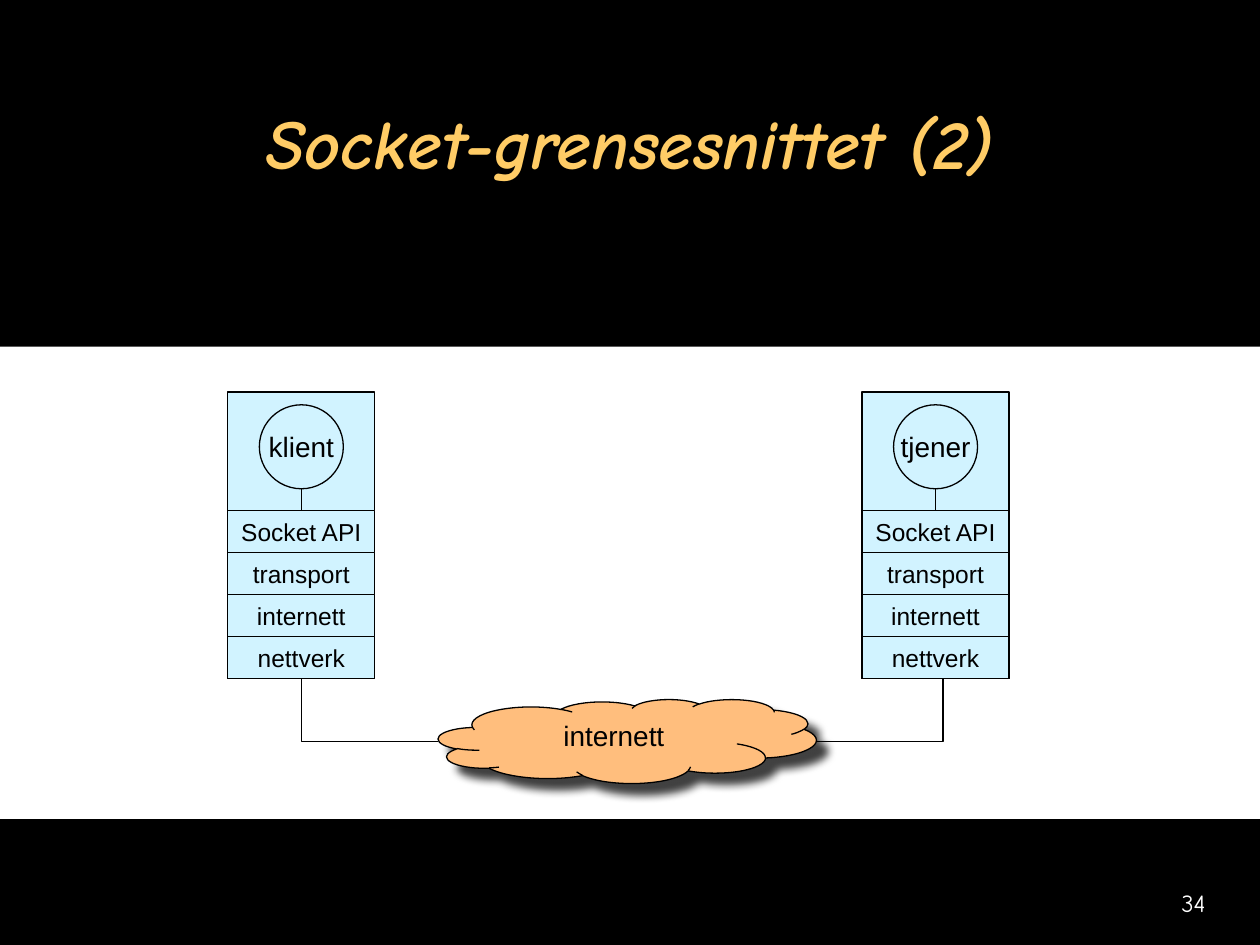
from dataclasses import dataclass

from lxml import etree
from pptx import Presentation
from pptx.dml.color import RGBColor
from pptx.enum.shapes import MSO_CONNECTOR, MSO_SHAPE
from pptx.enum.text import MSO_ANCHOR, PP_ALIGN
from pptx.oxml.ns import qn
from pptx.util import Inches, Pt

RECT, OVAL, CLOUD = MSO_SHAPE.RECTANGLE, MSO_SHAPE.OVAL, MSO_SHAPE.CLOUD
STRAIGHT, ELBOW = MSO_CONNECTOR.STRAIGHT, MSO_CONNECTOR.ELBOW
TOP, MIDDLE = MSO_ANCHOR.TOP, MSO_ANCHOR.MIDDLE
CENTER, RIGHT = PP_ALIGN.CENTER, PP_ALIGN.RIGHT
RECT_TOP = 0
COLUMNS, ROWS = 120, 90


@dataclass(frozen=True)
class Theme:
    black: str = "000000"
    white: str = "FFFFFF"
    gold: str = "FFCC66"
    blue: str = "D1F3FF"
    orange: str = "FFBE7D"
    display: str = "Comic Neue"
    body: str = "Arial"
    title_size: int = 40
    label_size: int = 16
    small_size: int = 14
    line_width: float = 0.75


THEME = Theme()


class SlideBuilder:
    """Draws on one slide; lengths are columns and rows of a 120 x 90 grid."""

    def __init__(self, deck, theme):
        self.theme = theme
        self.page = deck.slides.add_slide(deck.slide_layouts[6])
        self.column = deck.slide_width / COLUMNS
        self.row = deck.slide_height / ROWS
        background = self.page.background.fill
        background.solid()
        background.fore_color.rgb = RGBColor.from_string(theme.black)

    def place(self, x, y, width, height):
        return [round(x * self.column), round(y * self.row),
                round(width * self.column), round(height * self.row)]

    def label(self, box, text, size, font, color, align=CENTER,
              anchor=MIDDLE, wrap=False, **styles):
        frame = box.text_frame
        frame.word_wrap, frame.vertical_anchor = wrap, anchor
        para = frame.paragraphs[0]
        para.alignment = align
        span = para.add_run()
        span.text = text
        span.font.color.rgb = RGBColor.from_string(color)
        formats = {"name": font, "size": Pt(size), **styles}
        for name, value in formats.items():
            setattr(span.font, name, value)

    def text(self, area, text, size, color, **options):
        box = self.page.shapes.add_textbox(*self.place(*area))
        self.label(box, text, size, self.theme.display, color, wrap=True, **options)

    def outline(self, line):
        line.color.rgb = RGBColor.from_string(self.theme.black)
        line.width = Pt(self.theme.line_width)

    def shape(self, kind, area, fill, text=None, size=None, outlined=True, **options):
        shape = self.page.shapes.add_shape(kind, *self.place(*area))
        shape.shadow.inherit = False
        shape.fill.solid()
        shape.fill.fore_color.rgb = RGBColor.from_string(fill)
        if outlined:
            self.outline(shape.line)
        else:
            shape.line.fill.background()
        if text:
            self.label(shape, text, size, self.theme.body, self.theme.black, **options)
        return shape

    def drop_shadow(self, shape, blur, distance, angle, opacity):
        effects = shape._element.spPr.find(qn("a:effectLst"))
        shadow = etree.SubElement(effects, qn("a:outerShdw"))
        values = {"blurRad": Pt(blur), "dist": Pt(distance),
                  "dir": angle * 60000, "rotWithShape": 0}
        for name, value in values.items():
            shadow.set(name, str(int(value)))
        color = etree.SubElement(shadow, qn("a:srgbClr"), val=self.theme.black)
        etree.SubElement(color, qn("a:alpha"), val=str(opacity * 1000))

    def connector(self, kind, start, end):
        line = self.page.shapes.add_connector(kind, *self.place(*start, *end))
        self.outline(line.line)
        properties = line._element.spPr
        etree.SubElement(properties, qn("a:effectLst"))
        if kind == ELBOW:  # a single corner: sideways, then up
            properties.find(qn("a:prstGeom")).set("prst", "bentConnector2")
        return line

    def host(self, x, y, name, layers):
        """A machine: its process in a circle above the protocol stack."""
        theme = self.theme
        width, layer_height, circle = 14, 4, 8
        stack_top = y + 11.25
        middle, circle_top = x + width / 2, y + 1.2
        self.shape(RECT, (x, y, width, 11.25 + layer_height * len(layers)), theme.blue)
        self.shape(OVAL, (middle - circle / 2, circle_top, circle, circle),
                   theme.blue, name, theme.label_size)
        boxes = [
            self.shape(RECT, (x, stack_top + i * layer_height, width, layer_height),
                       theme.blue, layer, theme.small_size)
            for i, layer in enumerate(layers)
        ]
        stem = self.connector(STRAIGHT, (middle, circle_top + circle), (middle, stack_top))
        stem.end_connect(boxes[0], RECT_TOP)


def main():
    deck = Presentation()
    deck.slide_width, deck.slide_height = Inches(10), Inches(7.5)
    slide = SlideBuilder(deck, THEME)

    # Page number, title and white panel
    slide.text((91, 84, 25, 4), "34", THEME.small_size, THEME.white,
               align=RIGHT, anchor=TOP)
    slide.text((5, 6, 110, 15), "Socket-grensesnittet (2)", THEME.title_size,
               THEME.gold, bold=True, italic=True)
    slide.shape(RECT, (0, 33, COLUMNS, 45), THEME.white, outlined=False)

    # Network cloud
    cloud_left, cloud_width = 41.75, 36
    cloud = slide.shape(CLOUD, (cloud_left, 66.6, cloud_width, 8), THEME.orange,
                        "internett", THEME.label_size, anchor=TOP, wrap=True)
    slide.drop_shadow(cloud, blur=5, distance=8.5, angle=45, opacity=75)

    # Links from the cloud up to the hosts
    link_y, host_bottom = 70.6, 64.6
    for cloud_x, host_x in ((cloud_left, 28.7), (cloud_left + cloud_width, 89.8)):
        slide.connector(ELBOW, (cloud_x, link_y), (host_x, host_bottom))

    # Client and server
    layers = ("Socket API", "transport", "internett", "nettverk")
    for x, name in ((21.7, "klient"), (82.1, "tjener")):
        slide.host(x, 37.35, name, layers)

    deck.save("out.pptx")


if __name__ == "__main__":
    main()
